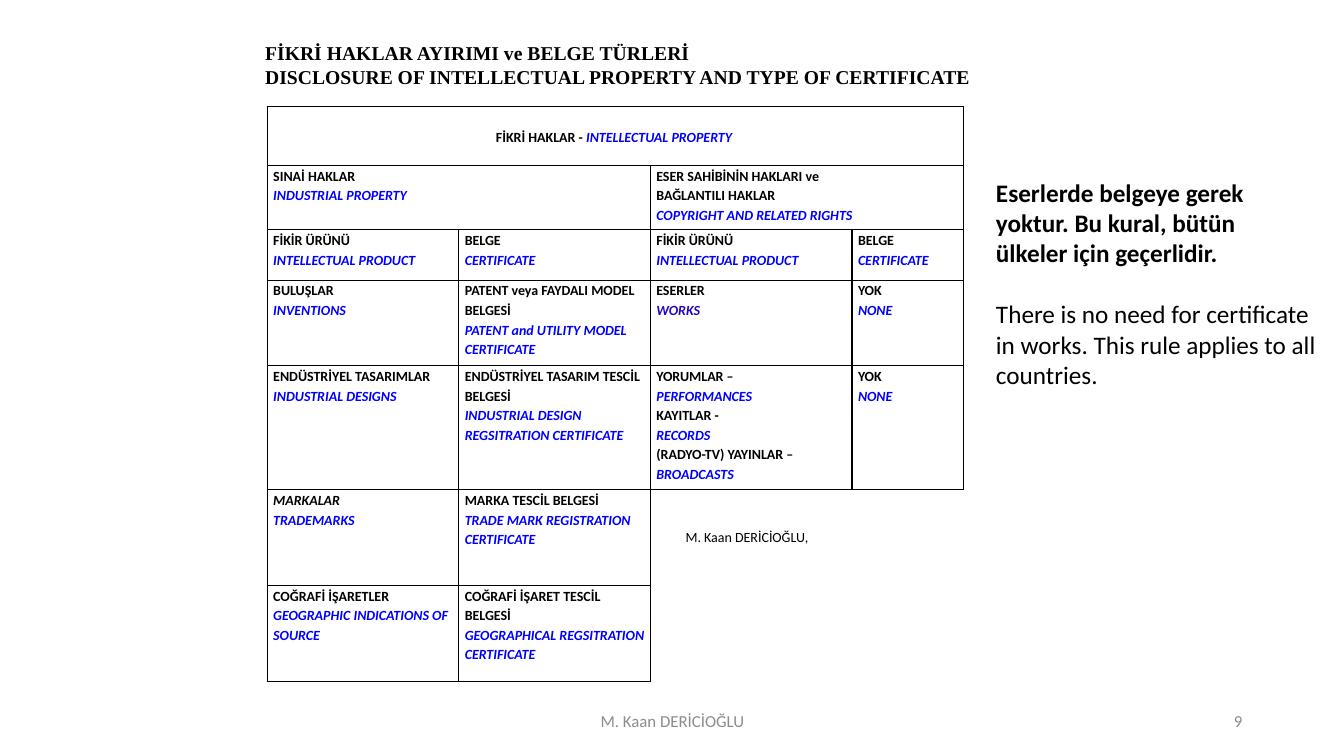
from dataclasses import dataclass

from lxml.etree import SubElement
from pptx import Presentation
from pptx.dml.color import RGBColor
from pptx.enum.text import MSO_ANCHOR, MSO_AUTO_SIZE, PP_ALIGN
from pptx.oxml.ns import qn
from pptx.util import Inches, Pt


@dataclass(frozen=True)
class Theme:
    black: str = "000000"
    blue: str = "0000FF"
    indigo: str = "2207C1"
    grey: str = "8C8C8C"
    body_font: str = "Calibri"
    title_font: str = "Times New Roman"
    table_size: int = 10
    footer_size: int = 12
    title_size: int = 14
    note_size: int = 18


THEME = Theme()


@dataclass(frozen=True)
class Phrase:
    text: str
    size: int = THEME.table_size
    color: str = THEME.black
    bold: bool = True
    italic: bool = False
    font: str = THEME.body_font


def english(text, color=THEME.blue):
    return Phrase(text, color=color, italic=True)


def pair(turkish, translation):
    return [[Phrase(turkish)], [english(translation)]]


PRODUCT = pair("FİKİR ÜRÜNÜ", "INTELLECTUAL PRODUCT")
CERTIFICATE = pair("BELGE", "CERTIFICATE")
NONE_NEEDED = pair("YOK", "NONE")

COLUMN_WIDTHS = [1.9, 1.9, 2, 1.11]
ROW_HEIGHTS = [0.58, 0.64, 0.5, 0.85, 1.23, 0.95, 0.95]
MERGES = [(0, 0, 0, 3), (1, 0, 1, 1), (1, 2, 1, 3), (5, 2, 6, 3)]
AUTHOR_CELL = (5, 2)

RIGHTS = [
    [[[Phrase("FİKRİ HAKLAR - "), english("INTELLECTUAL PROPERTY ")]]],
    [
        pair("SINAİ HAKLAR", "INDUSTRIAL PROPERTY"),
        None,
        [[Phrase("ESER SAHİBİNİN HAKLARI ve")],
         *pair("BAĞLANTILI HAKLAR", "COPYRIGHT AND RELATED RIGHTS")],
    ],
    [PRODUCT, CERTIFICATE, PRODUCT, CERTIFICATE],
    [
        pair("BULUŞLAR", "INVENTIONS"),
        pair("PATENT veya FAYDALI MODEL BELGESİ",
             "PATENT and UTILITY MODEL CERTIFICATE"),
        [[Phrase("ESERLER")], [english("WORKS", THEME.indigo)]],
        NONE_NEEDED,
    ],
    [
        pair("ENDÜSTRİYEL TASARIMLAR", "INDUSTRIAL DESIGNS"),
        pair("ENDÜSTRİYEL TASARIM TESCİL BELGESİ",
             "INDUSTRIAL DESIGN REGSITRATION CERTIFICATE"),
        [*pair("YORUMLAR –", "PERFORMANCES"),
         *pair("KAYITLAR -", "RECORDS"),
         [Phrase("(RADYO-TV) YAYINLAR – "), english("BROADCASTS")]],
        NONE_NEEDED,
    ],
    [
        [[Phrase("MARKALAR", italic=True)], [english("TRADEMARKS")]],
        pair("MARKA TESCİL BELGESİ", "TRADE MARK REGISTRATION CERTIFICATE"),
        [[Phrase("M. Kaan DERİCİOĞLU,", bold=False)]],
    ],
    [
        [[Phrase("COĞRAFİ İŞARETLER "),
          english("GEOGRAPHIC INDICATIONS OF SOURCE")]],
        pair("COĞRAFİ İŞARET TESCİL BELGESİ",
             "GEOGRAPHICAL REGSITRATION CERTIFICATE"),
    ],
]


def write(frame, lines, align=PP_ALIGN.LEFT, spacing=1.0):
    for index, phrases in enumerate(lines):
        paragraph = frame.paragraphs[0] if index == 0 else frame.add_paragraph()
        paragraph.alignment = align
        paragraph.line_spacing = spacing
        paragraph.space_before = Pt(0)
        for phrase in phrases:
            run = paragraph.add_run()
            run.text = phrase.text
            run.font.name = phrase.font
            run.font.size = Pt(phrase.size)
            run.font.bold = phrase.bold
            run.font.italic = phrase.italic
            run.font.color.rgb = RGBColor.from_string(phrase.color)


def add_title(slide):
    title = slide.shapes.title
    title.left, title.top = Inches(2.53), Inches(0.36)
    title.width, title.height = Inches(7.61), Inches(0.57)
    frame = title.text_frame
    frame.auto_size = MSO_AUTO_SIZE.NONE
    frame.vertical_anchor = MSO_ANCHOR.TOP
    headings = ["FİKRİ HAKLAR AYIRIMI ve BELGE TÜRLERİ",
                "DISCLOSURE OF INTELLECTUAL PROPERTY AND TYPE OF CERTIFICATE"]
    write(frame, [[Phrase(heading, THEME.title_size, font=THEME.title_font)]
                  for heading in headings])


def add_text(slide, left, top, width, height, lines,
             align=PP_ALIGN.LEFT, anchor=MSO_ANCHOR.TOP):
    box = slide.shapes.add_textbox(
        Inches(left), Inches(top), Inches(width), Inches(height))
    frame = box.text_frame
    frame.word_wrap = True
    frame.vertical_anchor = anchor
    write(frame, lines, align)
    return frame


def add_footer(slide, left, width, text, align):
    add_text(slide, left, 6.95, width, 0.4,
             [[Phrase(text, THEME.footer_size, THEME.grey, bold=False)]],
             align, MSO_ANCHOR.MIDDLE)


def set_borders(cell, sides):
    properties = cell._tc.get_or_add_tcPr()
    for side in ("L", "R", "T", "B"):
        visible = side in sides
        border = SubElement(properties, qn(f"a:ln{side}"),
                            w=str(Pt(1) if visible else 0))
        if visible:
            fill = SubElement(border, qn("a:solidFill"))
            SubElement(fill, qn("a:srgbClr"), val=THEME.black)
        else:
            SubElement(border, qn("a:noFill"))


def borders_of(row, column):
    if row < AUTHOR_CELL[0] or column < AUTHOR_CELL[1]:
        return "LRTB"
    return ("T" if row == AUTHOR_CELL[0] else "") + (
        "L" if column == AUTHOR_CELL[1] else "")


def add_rights_table(slide):
    table = slide.shapes.add_table(
        len(ROW_HEIGHTS), len(COLUMN_WIDTHS), Inches(2.65), Inches(1.06),
        Inches(sum(COLUMN_WIDTHS)), Inches(sum(ROW_HEIGHTS))).table
    table.first_row = table.horz_banding = False
    for column, width in zip(table.columns, COLUMN_WIDTHS):
        column.width = Inches(width)
    for row, height in zip(table.rows, ROW_HEIGHTS):
        row.height = Inches(height)
    for row in range(len(ROW_HEIGHTS)):
        for column in range(len(COLUMN_WIDTHS)):
            cell = table.cell(row, column)
            cell.margin_left = cell.margin_right = Inches(0.06)
            cell.margin_top = cell.margin_bottom = 0
            set_borders(cell, borders_of(row, column))
            cell.fill.background()
    for top, left, bottom, right in MERGES:
        table.cell(top, left).merge(table.cell(bottom, right))
    for row, contents in enumerate(RIGHTS):
        for column, lines in enumerate(contents):
            if lines:
                write(table.cell(row, column).text_frame, lines,
                      PP_ALIGN.CENTER if row == 0 else PP_ALIGN.LEFT, 1.15)
    table.cell(0, 0).vertical_anchor = MSO_ANCHOR.MIDDLE
    author = table.cell(*AUTHOR_CELL)
    author.margin_left, author.margin_top = Inches(0.35), Inches(0.37)


def add_note(slide):
    rule = ["Eserlerde belgeye gerek", "yoktur. Bu kural, bütün",
            "ülkeler için geçerlidir."]
    translation = ("There is no need for certificate in works. "
                   "This rule applies to all countries.")
    lines = [[Phrase(line, THEME.note_size)] for line in rule]
    lines.append([Phrase(translation, THEME.note_size, bold=False)])
    note = add_text(slide, 9.78, 1.71, 3.42, 2.53, lines)
    note.paragraphs[-1].space_before = Pt(22)


def main():
    deck = Presentation()
    deck.slide_width, deck.slide_height = Inches(13.33), Inches(7.5)
    slide = deck.slides.add_slide(deck.slide_layouts[5])
    add_title(slide)
    add_rights_table(slide)
    add_note(slide)
    add_footer(slide, 4.42, 4.5, "M. Kaan DERİCİOĞLU", PP_ALIGN.CENTER)
    add_footer(slide, 9.42, 3, "9", PP_ALIGN.RIGHT)
    deck.save("out.pptx")


if __name__ == "__main__":
    main()
